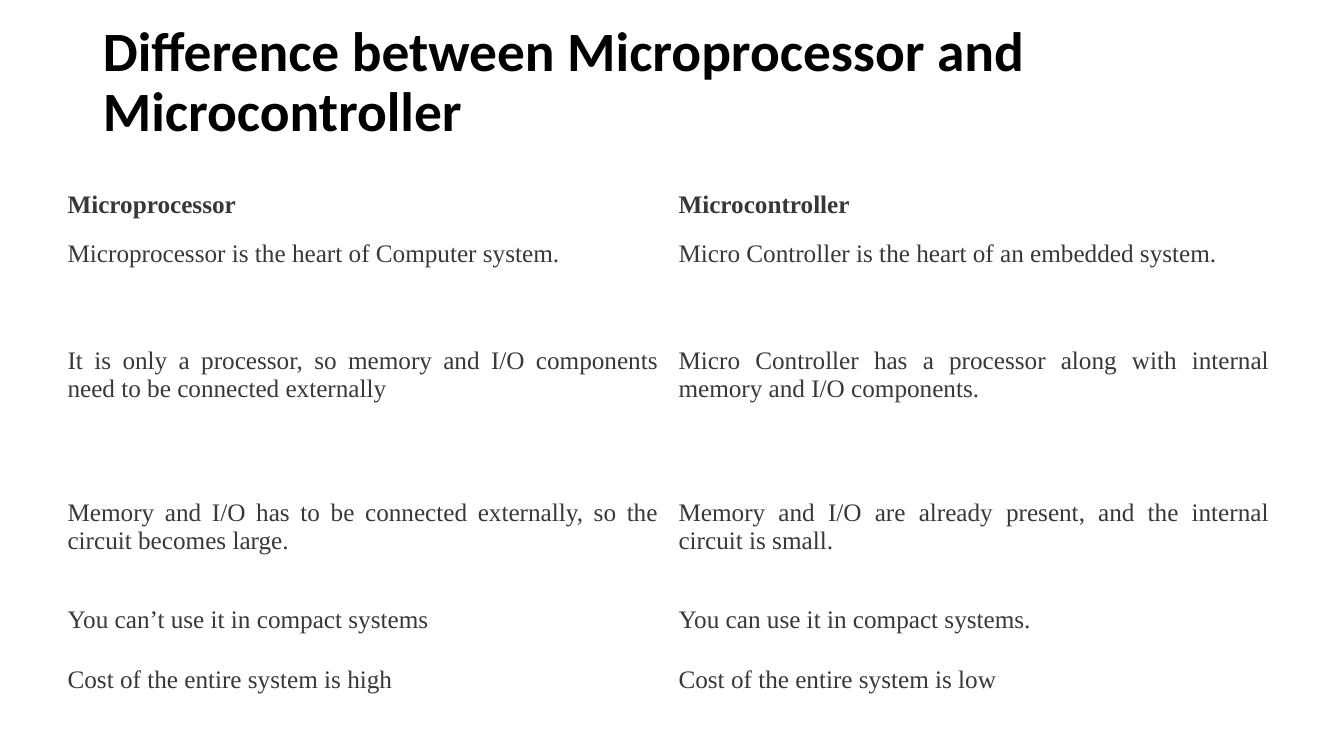
"""Builds a slide comparing microprocessors with microcontrollers in a table."""
import pptx
import pptx.dml.color
import pptx.enum.text
import pptx.oxml
import pptx.oxml.ns
import pptx.util

TITLE = "Difference between Microprocessor and Microcontroller"
ROWS = [
    (0.6, "Microprocessor", "Microcontroller"),
    (1.06, "Microprocessor is the heart of Computer system.",
     "Micro Controller is the heart of an embedded system."),
    (1.51, "It is only a processor, so memory and I/O components need to be connected externally",
     "Micro Controller has a processor along with internal memory and I/O components."),
    (1.06, "Memory and I/O has to be connected externally, so the circuit becomes large.",
     "Memory and I/O are already present, and the internal circuit is small."),
    (0.6, "You can’t use it in compact systems", "You can use it in compact systems."),
    (0.6, "Cost of the entire system is high", "Cost of the entire system is low"),
]
TABLE_LEFT, TABLE_TOP, COLUMN_WIDTH = 0.57, 1.73, 6.06
WHITE, BLACK, GREY = "FFFFFF", "000000", "383838"
ANCHOR = pptx.enum.text.MSO_ANCHOR
inches = pptx.util.Inches


def colour(hex_code):
    return pptx.dml.color.RGBColor.from_string(hex_code)


def add_span(para, text, font_name, size, hex_code, bold):
    span = para.add_run()
    span.text = text
    span.font.name = font_name
    span.font.size = pptx.util.Pt(size)
    span.font.bold = bold
    span.font.color.rgb = colour(hex_code)


def add_borders(cell, hex_code, points):
    properties = cell._tc.get_or_add_tcPr()
    for index, side in enumerate(("lnL", "lnR", "lnT", "lnB")):
        line = pptx.oxml.parse_xml(
            f'<a:{side} {pptx.oxml.ns.nsdecls("a")} w="{pptx.util.Pt(points)}">'
            f'<a:solidFill><a:srgbClr val="{hex_code}"/></a:solidFill></a:{side}>')
        properties.insert(index, line)


def add_title(page):
    title = page.shapes.title
    title.left, title.top = inches(0.92), inches(0.4)
    title.width, title.height = inches(11.5), inches(1.45)
    frame = title.text_frame
    frame.word_wrap = True
    frame.auto_size = pptx.enum.text.MSO_AUTO_SIZE.NONE
    frame.vertical_anchor = ANCHOR.MIDDLE
    frame.margin_bottom = inches(0.65)
    para = frame.paragraphs[0]
    para.alignment = pptx.enum.text.PP_ALIGN.LEFT
    para.line_spacing = 0.9
    para.space_before = pptx.util.Pt(0)
    add_span(para, TITLE, "Calibri", 39.6, BLACK, True)


def add_comparison(page):
    table = page.shapes.add_table(
        len(ROWS), 2, inches(TABLE_LEFT), inches(TABLE_TOP),
        inches(2 * COLUMN_WIDTH), inches(sum(row[0] for row in ROWS))).table
    for column in table.columns:
        column.width = inches(COLUMN_WIDTH)
    for row_index, (height, *texts) in enumerate(ROWS):
        table.rows[row_index].height = inches(height)
        is_header = row_index == 0
        for column_index, text in enumerate(texts):
            cell = table.cell(row_index, column_index)
            cell.fill.solid()
            cell.fill.fore_color.rgb = colour(WHITE)
            cell.vertical_anchor = ANCHOR.MIDDLE if is_header else ANCHOR.TOP
            add_borders(cell, WHITE, 0.75)
            para = cell.text_frame.paragraphs[0]
            para.alignment = pptx.enum.text.PP_ALIGN.JUSTIFY
            add_span(para, text, "Times New Roman", 18, GREY, is_header)


def main():
    deck = pptx.Presentation()
    deck.slide_width, deck.slide_height = inches(13.33), inches(7.5)
    page = deck.slides.add_slide(deck.slide_layouts.get_by_name("Title Only"))
    add_title(page)
    add_comparison(page)
    deck.save("out.pptx")


if __name__ == "__main__":
    main()
